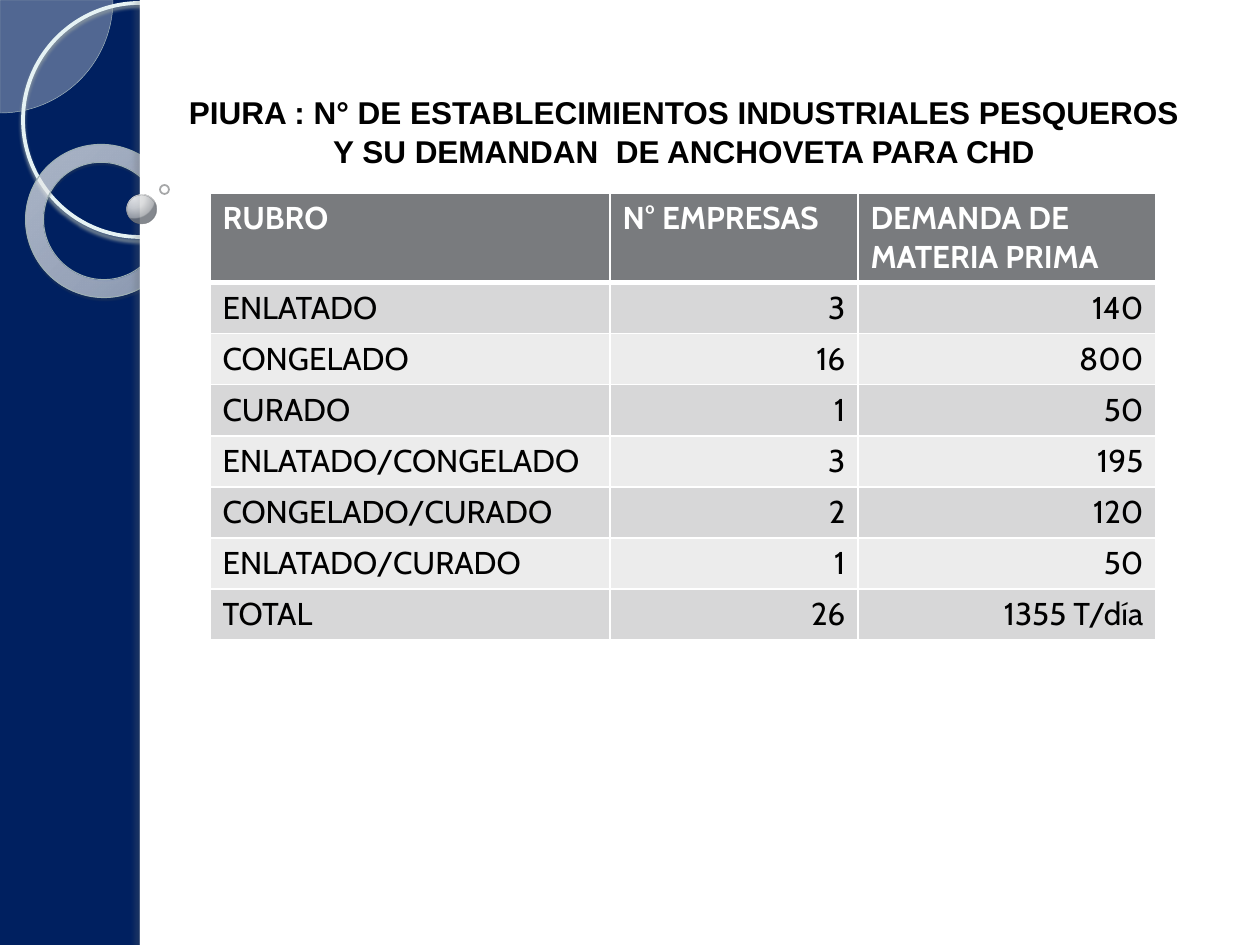
from lxml.etree import SubElement
from pptx import Presentation
from pptx.dml.color import RGBColor
from pptx.enum.shapes import MSO_SHAPE
from pptx.enum.text import MSO_ANCHOR, MSO_AUTO_SIZE, PP_ALIGN
from pptx.oxml.ns import qn
from pptx.util import Pt

PX = 914400 / 126
COLORS = {
    "navy": "002060", "white": "FFFFFF", "black": "000000",
    "pie": "F6F9FA", "pie_line": "AABCBF", "ring": "E5F2F4",
    "ring_shadow": "95A1A3", "donut_line": "9EB0B4", "donut_shadow": "495052",
    "strip_shadow": "666B6C", "ball_line": "737579", "dot_line": "6B6D6F",
    "header": "797B7E", "odd": "D7D7D8", "even": "ECECEC",
}
DONUT_STOPS = [(0, "F8FBFC", 70), (70, "FCFDFE", 55), (100, "A7C7CE", 60)]
BALL_STOPS = [(0, "EBECED", 95), (50, "D8D9DA", 90),
              (95, "A6A9AD", 88), (100, "70757C", 85)]
TITLE = ["PIURA : N° DE ESTABLECIMIENTOS INDUSTRIALES PESQUEROS",
         "Y SU DEMANDAN  DE ANCHOVETA PARA CHD"]
ROWS = [
    ("RUBRO", "N° EMPRESAS", "DEMANDA DE MATERIA PRIMA"),
    ("ENLATADO", "3", "140"),
    ("CONGELADO", "16", "800"),
    ("CURADO", "1", "50"),
    ("ENLATADO/CONGELADO", "3", "195"),
    ("CONGELADO/CURADO", "2", "120"),
    ("ENLATADO/CURADO", "1", "50"),
    ("TOTAL", "26", "1355 T/día"),
]


def px(n):
    return round(n * PX)


def rgb(name):
    return RGBColor.from_string(COLORS[name])


def sub(parent, tag, **attrs):
    return SubElement(parent, qn(tag), {k: str(v) for k, v in attrs.items()})


def set_alpha(fill_parent, percent):
    clr = fill_parent.find(qn("a:solidFill")).find(qn("a:srgbClr"))
    sub(clr, "a:alpha", val=percent * 1000)


def set_gradient(sp, stops, focus):
    sp.fill.gradient()
    grad = sp._element.spPr.find(qn("a:gradFill"))
    grad.clear()
    gs_list = sub(grad, "a:gsLst")
    for pos, color, alpha in stops:
        clr = sub(sub(gs_list, "a:gs", pos=pos * 1000), "a:srgbClr", val=color)
        sub(clr, "a:alpha", val=alpha * 1000)
    sides = {k: v * 1000 for k, v in zip("ltrb", focus)}
    sub(sub(grad, "a:path", path="circle"), "a:fillToRect", **sides)


def add_shape(s, kind, box, fill=None, alpha=None, line=None, shadow=None):
    """line: colour, width, opacity; shadow: colour, opacity, blur, distance, angle."""
    sp = s.shapes.add_shape(kind, *map(px, box))
    sp.shadow.inherit = False
    spPr = sp._element.spPr
    if fill:
        sp.fill.solid()
        sp.fill.fore_color.rgb = rgb(fill)
        if alpha:
            set_alpha(spPr, alpha)
    else:
        sp.fill.background()
    if line:
        color, width, opacity = line
        sp.line.color.rgb = rgb(color)
        sp.line.width = Pt(width)
        set_alpha(spPr.find(qn("a:ln")), opacity)
    else:
        sp.line.fill.background()
    if shadow:
        color, opacity, blur, dist, angle = shadow
        outer = sub(spPr.find(qn("a:effectLst")), "a:outerShdw",
                    blurRad=Pt(blur), dist=Pt(dist), dir=angle * 60000,
                    algn="tl", rotWithShape=0)
        clr = sub(outer, "a:srgbClr", val=COLORS[color])
        sub(clr, "a:alpha", val=opacity * 1000)
    return sp


def add_side_band(s, x, y, w, h):
    # Quarter disc centred on the corner, and the large ring
    pie = add_shape(s, MSO_SHAPE.PIE, (x - 113, y - 113, 226, 226), "pie", 33,
                    line=("pie_line", 0.25, 100))
    pie.adjustments[0], pie.adjustments[1] = 0, 54
    add_shape(s, MSO_SHAPE.OVAL, (x + 23, y + 3, 234, 234),
              line=("ring", 2.15, 100), shadow=("ring_shadow", 85, 2, 2, 90))
    # Thick translucent ring
    donut = add_shape(s, MSO_SHAPE.DONUT, (x + 25, y + 145, 155, 152),
                      line=("donut_line", 0.58, 100),
                      shadow=("donut_shadow", 35, 1, 1.2, 75))
    donut.adjustments[0] = 0.118
    donut.rotation = 38.6
    set_gradient(donut, DONUT_STOPS, (-408, -50, 508, 150))
    # White page area with a shaded edge
    add_shape(s, MSO_SHAPE.RECTANGLE, (x + w, y, 1260 - x - w, h), "white")
    add_shape(s, MSO_SHAPE.RECTANGLE, (x + w, y, 10, h), "white",
              shadow=("strip_shadow", 25, 3, 3, 180))
    # Ball and small circle on the edge
    ball = add_shape(s, MSO_SHAPE.OVAL, (x + 127, y + 195, 29, 29),
                     line=("ball_line", 0.16, 60))
    set_gradient(ball, BALL_STOPS, (25, 12, 75, 88))
    add_shape(s, MSO_SHAPE.OVAL, (x + 160, y + 185, 9, 9),
              line=("dot_line", 1, 60))


def set_font(p, **values):
    p.font.color.rgb = rgb(values.pop("color"))
    for name, value in values.items():
        setattr(p.font, name, value)


def add_title(s, x, y, w, h):
    title = s.shapes.title
    s.shapes._spTree.append(title._element)  # in front of the white area
    for name, value in zip(("left", "top", "width", "height"), (x, y, w, h)):
        setattr(title, name, px(value))
    tf = title.text_frame
    tf.text = "\n".join(TITLE)
    tf.word_wrap = False
    tf.auto_size = MSO_AUTO_SIZE.SHAPE_TO_FIT_TEXT
    tf.vertical_anchor = MSO_ANCHOR.TOP
    for p in tf.paragraphs:
        p.alignment = PP_ALIGN.CENTER
        p.line_spacing = Pt(22)
        p.space_before = Pt(0)
        set_font(p, size=Pt(18), name="Arial", bold=True, color="black")


def set_borders(cell, widths):
    tcPr = cell._tc.get_or_add_tcPr()
    for i, (side, width) in enumerate(widths.items()):
        ln = sub(tcPr, f"a:ln{side}", w=Pt(width))
        sub(sub(ln, "a:solidFill"), "a:srgbClr", val=COLORS["white"])
        tcPr.insert(i, ln)


def add_demand_table(s, x, y, w, h):
    col_widths = (400, 248, w - 648)
    row_h = 51
    table = s.shapes.add_table(len(ROWS), 3, px(x), px(y), px(w), px(h)).table
    for col, width in zip(table.columns, col_widths):
        col.width = px(width)
    for i, values in enumerate(ROWS):
        head = i == 0
        table.rows[i].height = px(row_h if i else h - row_h * (len(ROWS) - 1))
        for j, value in enumerate(values):
            cell = table.cell(i, j)
            cell.text = value
            cell.fill.solid()
            cell.fill.fore_color.rgb = rgb(
                "header" if head else "odd" if i % 2 else "even")
            set_borders(cell, {"L": 1, "R": 1, "T": 3 if i == 1 else 1,
                               "B": 3 if head else 1})
            p = cell.text_frame.paragraphs[0]
            p.alignment = PP_ALIGN.RIGHT if i and j else PP_ALIGN.LEFT
            set_font(p, size=Pt(18), name="Cabin", bold=head,
                     color="white" if head else "black")


def main():
    prs = Presentation()
    prs.slide_width, prs.slide_height = px(1260), px(945)
    s = prs.slides.add_slide(prs.slide_layouts[5])
    s.background.fill.solid()
    s.background.fill.fore_color.rgb = rgb("navy")
    add_side_band(s, 0, 0, 140, 945)
    add_demand_table(s, 210, 193, 946, 446)
    add_title(s, 156, 86, 1056, 89)
    prs.save("out.pptx")


if __name__ == "__main__":
    main()
